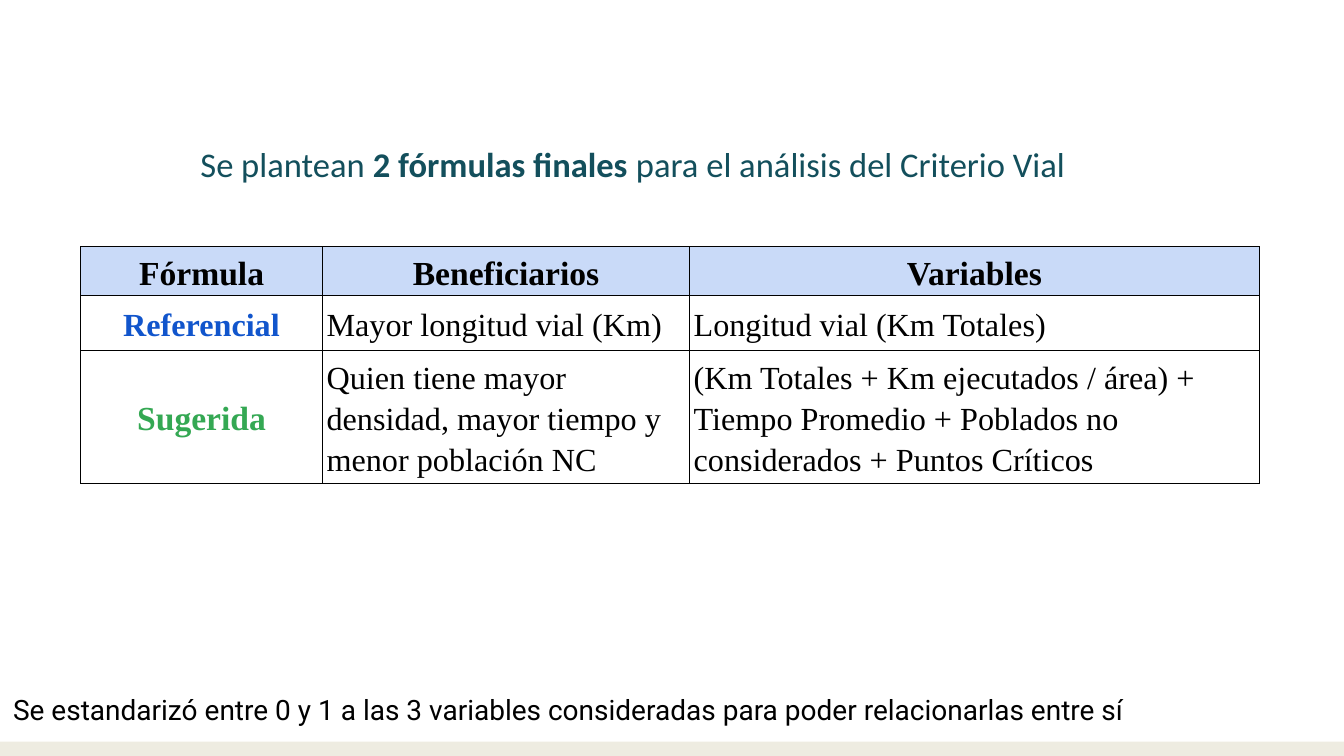
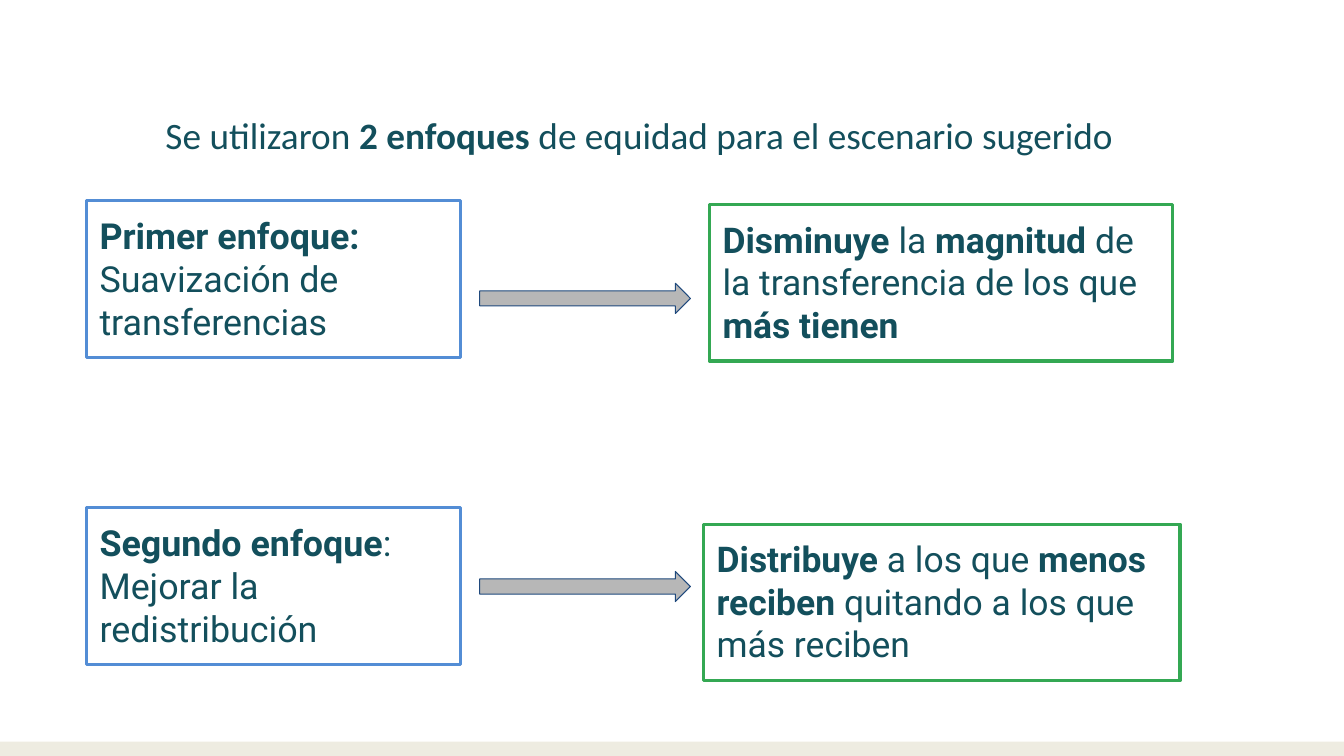
from lxml import etree
from pptx import Presentation
from pptx import util as u
from pptx.dml.color import RGBColor
from pptx.enum import shapes, text
from pptx.oxml import ns

COLORS = {
    "band": "EEECE1", "teal": "134F5C", "black": "000000", "white": "FFFFFF",
    "header": "C9DAF8", "blue": "1155CC", "green": "34A853",
    "box_blue": "538DD5", "arrow": "B7B7B7", "arrow_line": "1F497D",
}
PAGE_WIDTH, PAGE_HEIGHT = 33.87, 19.05
BAND_HEIGHT = 0.36
TITLE_ONLY = 5
CELL_BORDERS = ("a:lnL", "a:lnR", "a:lnT", "a:lnB")

FRAME = {
    "word_wrap": True,
    "auto_size": text.MSO_AUTO_SIZE.NONE,
    "vertical_anchor": text.MSO_ANCHOR.TOP,
    **{f"margin_{side}": u.Cm(0.33) for side in ("left", "right", "top", "bottom")},
}
CELL_MARGINS = {
    "margin_left": u.Cm(0.1), "margin_right": u.Cm(0.1),
    "margin_top": u.Cm(0.08), "margin_bottom": u.Cm(0.08),
}
CENTER, LEFT = text.PP_ALIGN.CENTER, text.PP_ALIGN.LEFT


def color(name):
    return RGBColor.from_string(COLORS[name])


def apply_format(target, values):
    for name, value in values.items():
        setattr(target, name, value)


def write(para, content, font, size, ink, align=LEFT):
    """Fill a paragraph; parts between ** marks are bold."""
    para.alignment = align
    for index, part in enumerate(content.split("**")):
        if part:
            span = para.add_run()
            span.text = part
            apply_format(span.font, {"name": font, "size": u.Pt(size), "bold": index % 2 == 1})
            span.font.color.rgb = color(ink)


def place(shape, left, top, width, height):
    apply_format(shape, {"left": u.Cm(left), "top": u.Cm(top),
                         "width": u.Cm(width), "height": u.Cm(height)})


def add_preset(page, kind, area, fill=None, line=None, weight=0.75):
    shape = page.shapes.add_shape(kind, *map(u.Cm, area))
    shape.shadow.inherit = False
    if fill:
        shape.fill.solid()
        shape.fill.fore_color.rgb = color(fill)
    else:
        shape.fill.background()
    if line:
        shape.line.color.rgb = color(line)
        shape.line.width = u.Pt(weight)
    else:
        shape.line.fill.background()
    return shape


def add_master_band(deck, page):
    """Build the bottom band on a page, then move it to the master."""
    area = (0, PAGE_HEIGHT - BAND_HEIGHT, PAGE_WIDTH, BAND_HEIGHT)
    band = add_preset(page, shapes.MSO_SHAPE.RECTANGLE, area, fill="band")
    deck.slide_master.element.cSld.spTree.insert(2, band.element)


def add_page(deck, title, left, top, height, size):
    page = deck.slides.add_slide(deck.slide_layouts[TITLE_ONLY])
    box = page.shapes.title
    place(box, left, top, PAGE_WIDTH - left, height)
    apply_format(box.text_frame, FRAME)
    write(box.text_frame.paragraphs[0], title, "Calibri", size, "teal")
    return page


def add_note(page, content, area):
    box = page.shapes.add_textbox(*map(u.Cm, area))
    apply_format(box.text_frame, FRAME)
    write(box.text_frame.paragraphs[0], content, "Roboto", 20, "black")


def add_text_box(page, content, area, line, size):
    box = add_preset(page, shapes.MSO_SHAPE.RECTANGLE, area, line=line, weight=2.25)
    apply_format(box.text_frame, FRAME)
    write(box.text_frame.paragraphs[0], content, "Roboto", size, "teal")


def add_borders(cell):
    properties = cell._tc.get_or_add_tcPr()
    for tag in CELL_BORDERS:
        border = etree.SubElement(properties, ns.qn(tag), w=str(u.Pt(0.75)))
        fill = etree.SubElement(border, ns.qn("a:solidFill"))
        etree.SubElement(fill, ns.qn("a:srgbClr"), val=COLORS["black"])


def format_cell(cell, content, size, ink, align, fill, anchor):
    apply_format(cell, {**CELL_MARGINS, "vertical_anchor": anchor})
    add_borders(cell)
    cell.fill.solid()
    cell.fill.fore_color.rgb = color(fill)
    para = cell.text_frame.paragraphs[0]
    para.line_spacing = 1.15
    write(para, content, "Times New Roman", size, ink, align)


def add_formula_table(page, left, top, widths, heights, header, rows):
    """Each row holds its name, name size, name colour and two descriptions."""
    table = page.shapes.add_table(
        len(heights), len(widths), u.Cm(left), u.Cm(top),
        u.Cm(sum(widths)), u.Cm(sum(heights))).table
    for column, width in zip(table.columns, widths):
        column.width = u.Cm(width)
    for row, height in zip(table.rows, heights):
        row.height = u.Cm(height)
    for index, label in enumerate(header):
        format_cell(table.cell(0, index), f"**{label}**", 24, "black", CENTER,
                    "header", text.MSO_ANCHOR.BOTTOM)
    for number, (name, size, ink, *details) in enumerate(rows, 1):
        format_cell(table.cell(number, 0), f"**{name}**", size, ink, CENTER,
                    "white", text.MSO_ANCHOR.MIDDLE)
        for index, detail in enumerate(details, 1):
            format_cell(table.cell(number, index), detail, 23, "black", LEFT,
                        "white", text.MSO_ANCHOR.MIDDLE)


def add_approach(page, approach, top, arrow_top, effect, effect_area):
    add_text_box(page, approach, (2.18, top, 9.42, 3.96), "box_blue", 25.6)
    add_preset(page, shapes.MSO_SHAPE.RIGHT_ARROW, (12.09, arrow_top, 5.31, 0.76),
               fill="arrow", line="arrow_line")
    add_text_box(page, effect, effect_area, "green", 25.3)


def main():
    deck = Presentation()
    deck.slide_width, deck.slide_height = u.Cm(PAGE_WIDTH), u.Cm(PAGE_HEIGHT)

    formulas = add_page(
        deck, "Se plantean** 2 fórmulas finales **para el análisis del Criterio Vial",
        left=4.72, top=3.28, height=2.31, size=24.7)
    add_master_band(deck, formulas)
    add_formula_table(
        formulas, 2.03, 6.22, widths=(6.1, 9.25, 14.35), heights=(1.22, 1.37, 3.35),
        header=("Fórmula", "Beneficiarios", "Variables"),
        rows=(
            ("Referencial", 23, "blue", "Mayor longitud vial (Km)",
             "Longitud vial (Km Totales)"),
            ("Sugerida", 24, "green",
             "Quien tiene mayor densidad, mayor tiempo y menor población NC",
             "(Km Totales + Km ejecutados / área) + Tiempo Promedio + "
             "Poblados no considerados + Puntos Críticos"),
        ))
    add_note(
        formulas,
        "Se estandarizó entre 0 y 1 a las 3 variables consideradas para poder "
        "relacionarlas entre sí",
        (0, 17.12, PAGE_WIDTH, 1.55))

    approaches = add_page(
        deck, "Se utilizaron **2 enfoques **de equidad para el escenario sugerido",
        left=3.84, top=2.49, height=1.85, size=26.6)
    add_approach(
        approaches, "**Primer enfoque:** Suavización de transferencias", 5.05, 7.14,
        "**Disminuye** la **magnitud** de la transferencia de los que** más tienen**",
        (17.88, 5.16, 11.68, 3.94))
    add_approach(
        approaches, "**Segundo enfoque**: Mejorar la redistribución", 12.78, 14.4,
        "**Distribuye** a los que **menos reciben **quitando a los que más reciben",
        (17.73, 13.21, 12.01, 3.94))

    deck.save("out.pptx")


if __name__ == "__main__":
    main()
